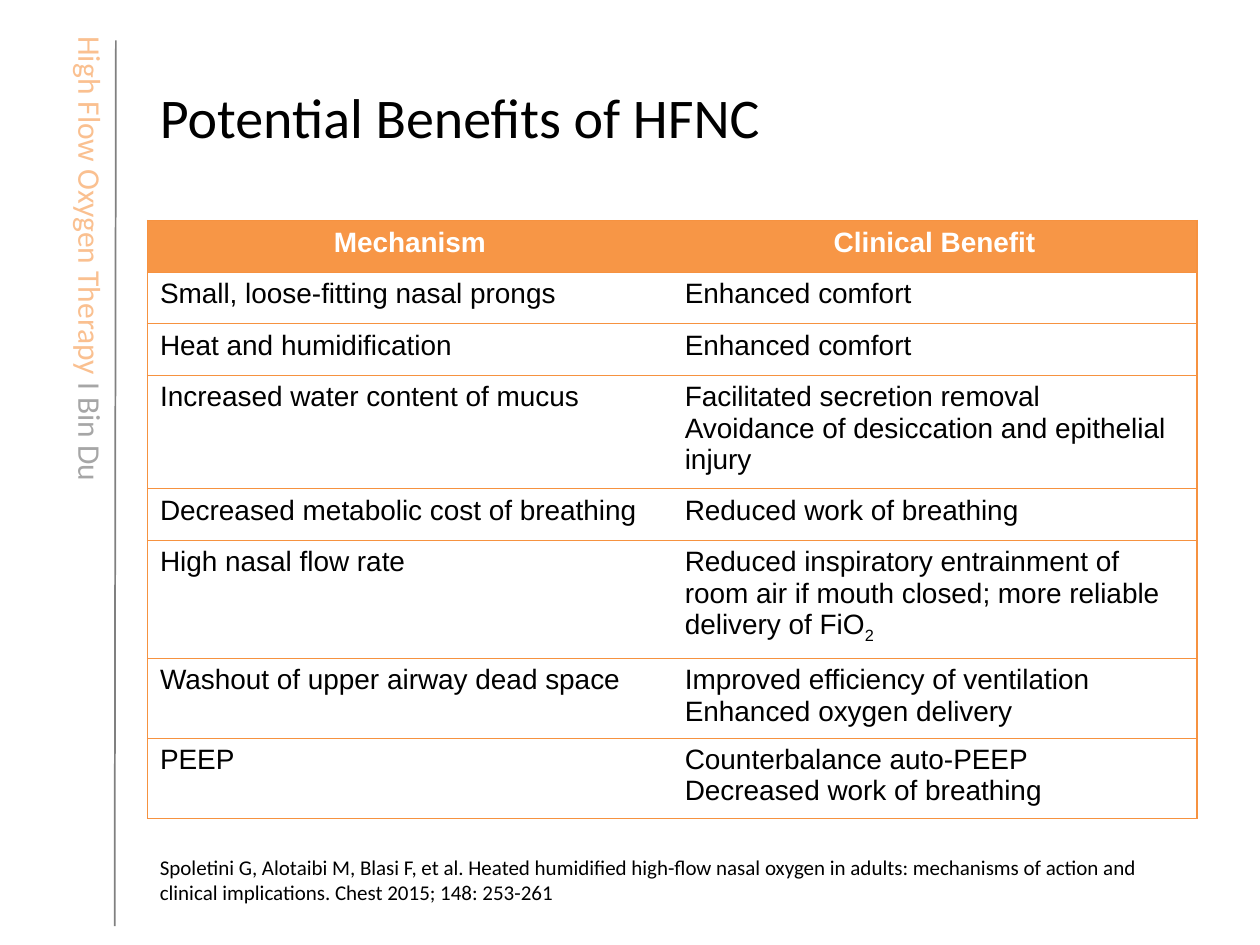
import pptx
import pptx.dml.color
import pptx.enum.shapes
import pptx.enum.text
import pptx.oxml
import pptx.oxml.ns
import pptx.util

Inches = pptx.util.Inches
Pt = pptx.util.Pt
RGBColor = pptx.dml.color.RGBColor
PP_ALIGN = pptx.enum.text.PP_ALIGN
MSO_ANCHOR = pptx.enum.text.MSO_ANCHOR
MSO_AUTO_SIZE = pptx.enum.text.MSO_AUTO_SIZE

BLACK = RGBColor(0x00, 0x00, 0x00)
WHITE = RGBColor(0xFF, 0xFF, 0xFF)
GRAY = RGBColor(0x80, 0x80, 0x80)
LIGHT_GRAY = RGBColor(0xA6, 0xA6, 0xA6)
PEACH = RGBColor(0xFA, 0xC0, 0x90)
ORANGE = RGBColor(0xF7, 0x96, 0x46)
BORDER = RGBColor(0xF6, 0x92, 0x40)

HEADER = ("Mechanism", "Clinical Benefit")
BENEFITS = [
    (0.41, "Small, loose-fitting nasal prongs", ["Enhanced comfort"]),
    (0.41, "Heat and humidification", ["Enhanced comfort"]),
    (0.9, "Increased water content of mucus",
     ["Facilitated secretion removal",
      "Avoidance of desiccation and epithelial injury"]),
    (0.41, "Decreased metabolic cost of breathing", ["Reduced work of breathing"]),
    (0.93, "High nasal flow rate",
     ["Reduced inspiratory entrainment of room air if mouth closed; "
      "more reliable delivery of FiO"]),
    (0.63, "Washout of upper airway dead space",
     ["Improved efficiency of ventilation", "Enhanced oxygen delivery"]),
    (0.63, "PEEP", ["Counterbalance auto-PEEP", "Decreased work of breathing"]),
]


def add_run(p, text, size=16, font="Arial", color=BLACK, bold=False, baseline=0):
    r = p.add_run()
    r.text = text
    r.font.size = Pt(size)
    r.font.name = font
    r.font.color.rgb = color
    r.font.bold = bold
    if baseline:
        r.font._element.set("baseline", str(baseline * 1000))
    return r


def add_box(s, x, y, w, h, anchor=MSO_ANCHOR.TOP, wrap=True):
    sp = s.shapes.add_textbox(Inches(x), Inches(y), Inches(w), Inches(h))
    tf = sp.text_frame
    tf.word_wrap = wrap
    tf.vertical_anchor = anchor
    return sp


def set_borders(cell, **colors):
    tcPr = cell._tc.get_or_add_tcPr()
    ns = pptx.oxml.ns.nsdecls("a")
    for i, side in enumerate("LRTB"):
        color = colors.get(side)
        fill = (f'<a:solidFill><a:srgbClr val="{color}"/></a:solidFill>'
                if color else "<a:noFill/>")
        ln = pptx.oxml.parse_xml(f'<a:ln{side} {ns} w="{Pt(0.75)}">{fill}</a:ln{side}>')
        tcPr.insert(i, ln)


def add_sidebar(s, x, y, w, h):
    line = s.shapes.add_connector(
        pptx.enum.shapes.MSO_CONNECTOR.STRAIGHT,
        Inches(x + w), Inches(y), Inches(x + w - 0.01), Inches(y + h))
    line.line.color.rgb = GRAY
    line.line.width = Pt(1)
    line._element.spPr.append(
        pptx.oxml.parse_xml(f'<a:effectLst {pptx.oxml.ns.nsdecls("a")}/>'))

    length, thick = 3.78, 0.4
    center_x, center_y = x + w / 2 + 0.03, y + length / 2 - 0.13
    sp = add_box(s, center_x - length / 2, center_y - thick / 2, length, thick, wrap=False)
    sp.rotation = 90
    sp.text_frame.auto_size = MSO_AUTO_SIZE.SHAPE_TO_FIT_TEXT
    p = sp.text_frame.paragraphs[0]
    add_run(p, "High Flow Oxygen Therapy ", size=18, font="Calibri", color=PEACH)
    add_run(p, "Ι Bin Du", size=18, font="Calibri", color=LIGHT_GRAY)


def add_title(s, x, y, w, h):
    sp = add_box(s, x, y, w, h, anchor=MSO_ANCHOR.MIDDLE)
    add_run(sp.text_frame.paragraphs[0], "Potential Benefits of HFNC",
            size=32, font="Calibri")


def add_benefit_table(s, x, y, w):
    heights = [0.41] + [row[0] for row in BENEFITS]
    table = s.shapes.add_table(len(heights), 2, Inches(x), Inches(y),
                               Inches(w), Inches(sum(heights))).table
    table.horz_banding = False
    for row, height in zip(table.rows, heights):
        row.height = Inches(height)

    for cell, text in zip(table.rows[0].cells, HEADER):
        p = cell.text_frame.paragraphs[0]
        p.alignment = PP_ALIGN.CENTER
        add_run(p, text, color=WHITE, bold=True)

    for i, (_, mechanism, benefits) in enumerate(BENEFITS, 1):
        add_run(table.cell(i, 0).text_frame.paragraphs[0], mechanism)
        tf = table.cell(i, 1).text_frame
        for j, benefit in enumerate(benefits):
            p = tf.add_paragraph() if j else tf.paragraphs[0]
            add_run(p, benefit)
            if benefit.endswith("FiO"):
                add_run(p, "2", baseline=-25)

    for i, row in enumerate(table.rows):
        for cell, side in zip(row.cells, "LR"):
            if i == 0:
                cell.fill.solid()
                cell.fill.fore_color.rgb = ORANGE
            else:
                cell.fill.background()
            set_borders(cell, T=BORDER, B=BORDER, **{side: BORDER})


def add_citation(s, x, y, w, h):
    sp = add_box(s, x, y, w, h)
    sp.text_frame.auto_size = MSO_AUTO_SIZE.SHAPE_TO_FIT_TEXT
    add_run(sp.text_frame.paragraphs[0],
            "Spoletini G, Alotaibi M, Blasi F, et al. Heated humidified high-flow "
            "nasal oxygen in adults: mechanisms of action and clinical implications. "
            "Chest 2015; 148: 253-261", size=12, font="Calibri")


def main():
    prs = pptx.Presentation()
    prs.slide_width = Inches(10)
    prs.slide_height = Inches(7.5)
    s = prs.slides.add_slide(prs.slide_layouts[6])
    left, width = 1.17, 8.33
    add_sidebar(s, 0.46, 0.32, 0.46, 7.03)
    add_title(s, left, 0.3, width, 1.25)
    add_citation(s, left, 6.73, width, 0.5)
    add_benefit_table(s, left, 1.75, width)
    prs.save("out.pptx")


if __name__ == "__main__":
    main()
